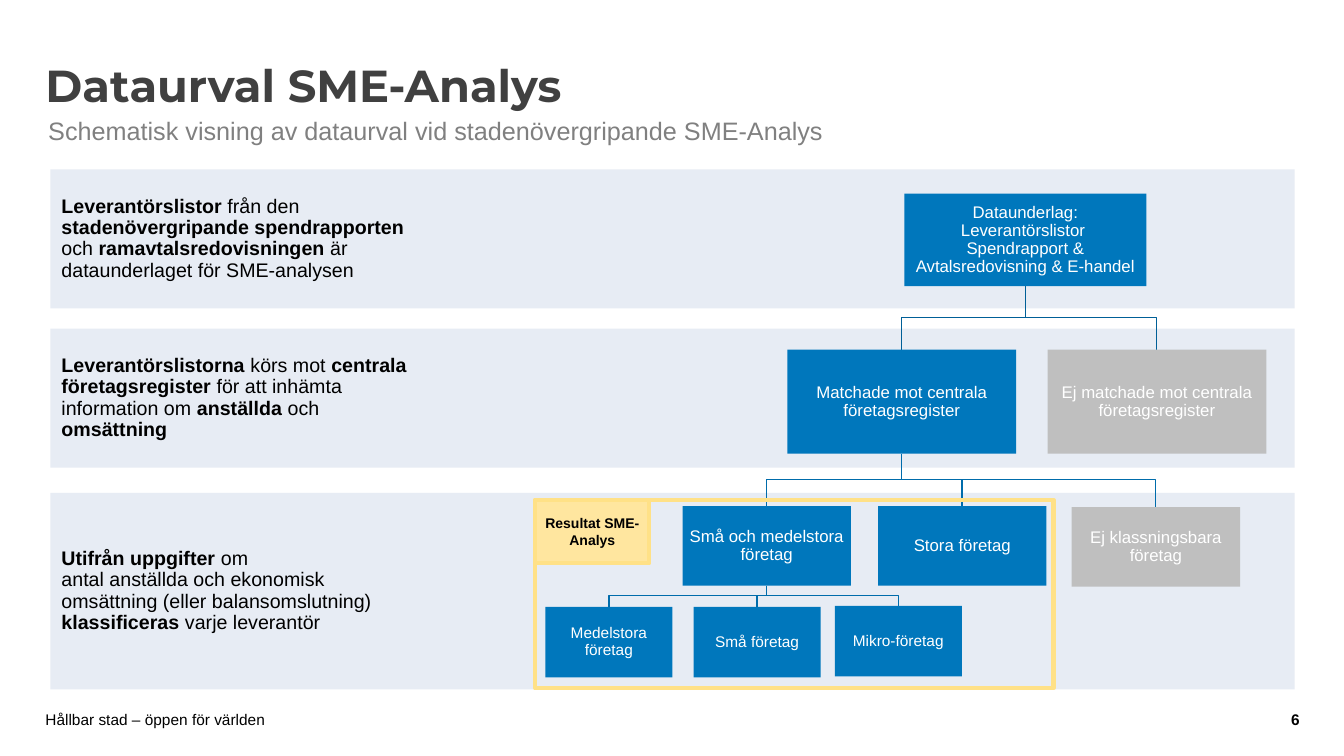
import pptx
import pptx.dml.color
import pptx.enum.shapes
import pptx.enum.text
import pptx.util

PX = 9144
COLORS = {
    "band": "E7ECF4",
    "blue": "0077BC",
    "gray": "BFBFBF",
    "upper link": "005F97",
    "lower link": "006CAB",
    "frame": "FFE187",
    "tag": "FFE69F",
    "title": "404040",
    "subtitle": "808080",
    "black": "000000",
    "white": "FFFFFF",
}
RGB = {name: pptx.dml.color.RGBColor.from_string(value) for name, value in COLORS.items()}
LEFT = pptx.enum.text.PP_ALIGN.LEFT
CENTER = pptx.enum.text.PP_ALIGN.CENTER
RIGHT = pptx.enum.text.PP_ALIGN.RIGHT

presentation = pptx.Presentation()
presentation.slide_width = 1333 * PX
presentation.slide_height = 750 * PX
slide = presentation.slides.add_slide(presentation.slide_layouts[5])


def add_rectangle(box, fill=None, line=None):
    shape = slide.shapes.add_shape(
        pptx.enum.shapes.MSO_SHAPE.RECTANGLE, *[length * PX for length in box]
    )
    shape.shadow.inherit = False
    if fill:
        shape.fill.solid()
        shape.fill.fore_color.rgb = RGB[fill]
    else:
        shape.fill.background()
    if line:
        shape.line.color.rgb = RGB[line]
        shape.line.width = pptx.util.Pt(3)
    else:
        shape.line.fill.background()
    return shape


def write(shape, parts, size, color, align=LEFT, insets=(0, 0), spacing=1.0, font="Arial"):
    frame = shape.text_frame
    frame.word_wrap = True
    frame.auto_size = pptx.enum.text.MSO_AUTO_SIZE.NONE
    frame.vertical_anchor = pptx.enum.text.MSO_ANCHOR.MIDDLE
    frame.margin_left = frame.margin_right = insets[0] * PX
    frame.margin_top = frame.margin_bottom = insets[1] * PX
    paragraph = frame.paragraphs[0]
    paragraph.alignment = align
    paragraph.line_spacing = spacing
    for text, bold in parts:
        for index, piece in enumerate(text.split("\n")):
            if index:
                paragraph.add_line_break()
            run = paragraph.add_run()
            run.text = piece
            run.font.name = font
            run.font.size = pptx.util.Pt(size)
            run.font.bold = bold
            run.font.color.rgb = RGB[color]


title = slide.shapes.title
title.left, title.top, title.width, title.height = [n * PX for n in (45, 44, 1003, 87)]
write(title, [("Dataurval SME-Analys", True)], 32, "title",
      insets=(0, 5), spacing=0.9, font="Montserrat")

bands = [
    (168, 138, [
        ("Leverantörslistor", True),
        (" från den ", False),
        ("stadenövergripande spendrapporten ", True),
        ("och ", False),
        ("ramavtalsredovisningen", True),
        (" är dataunderlaget för SME-analysen", False),
    ]),
    (326, 138, [
        ("Leverantörslistorna", True),
        (" körs mot ", False),
        ("centrala företagsregister", True),
        (" för att inhämta information om ", False),
        ("anställda", True),
        (" och ", False),
        ("omsättning", True),
    ]),
    (489, 195, [
        ("Utifrån uppgifter ", True),
        ("om \nantal anställda och ekonomisk omsättning (eller balansomslutning) ", False),
        ("klassificeras ", True),
        ("varje leverantör", False),
    ]),
]
for top, height, parts in bands:
    add_rectangle((50, top, 1234, height), "band")
    label = slide.shapes.add_textbox(50 * PX, top * PX, 370 * PX, height * PX)
    write(label, parts, 14, "black", insets=(11, 11), spacing=0.9)

nodes = {
    "source": ((897, 192, 240, 92), "blue", 12,
               "Dataunderlag: Leverantörslistor \nSpendrapport & Avtalsredovisning & E-handel"),
    "matched": ((781, 347, 227, 103), "blue", 12, "Matchade mot centrala företagsregister"),
    "unmatched": ((1039, 347, 217, 103), "gray", 12, "Ej matchade mot centrala företagsregister"),
    "small and medium": ((677, 502, 167, 79), "blue", 12, "Små och medelstora företag"),
    "large": ((871, 502, 167, 79), "blue", 12, "Stora företag"),
    "unclassified": ((1063, 503, 167, 79), "gray", 12, "Ej klassningsbara företag"),
    "medium": ((541, 602, 126, 70), "blue", 11, "Medelstora företag"),
    "small": ((688, 602, 126, 70), "blue", 11, "Små företag"),
    "micro": ((828, 601, 126, 70), "blue", 11, "Mikro-företag"),
}
links = [
    ("source", "upper link", ["matched", "unmatched"]),
    ("matched", "lower link", ["small and medium", "large", "unclassified"]),
    ("small and medium", "lower link", ["medium", "small", "micro"]),
]
for parent, color, children in links:
    left, top, width, height = nodes[parent][0]
    start_x, start_y = left + width // 2, top + height
    for child in children:
        child_left, end_y, child_width, child_height = nodes[child][0]
        end_x = child_left + child_width // 2
        middle_y = (start_y + end_y) // 2
        builder = slide.shapes.build_freeform(start_x, start_y, scale=PX)
        builder.add_line_segments(
            [(start_x, middle_y), (end_x, middle_y), (end_x, end_y)], close=False
        )
        link = builder.convert_to_shape()
        link.shadow.inherit = False
        link.fill.background()
        link.line.color.rgb = RGB[color]
        link.line.width = pptx.util.Pt(1)

for box, fill, size, text in nodes.values():
    write(add_rectangle(box, fill), [(text, False)], size, "white", CENTER, (5, 5), 0.9)

add_rectangle((531, 496, 514, 187), line="frame")
tag = add_rectangle((531, 496, 113, 63), "tag", "frame")
write(tag, [("Resultat SME-Analys", True)], 10, "black", CENTER, (10, 5))

captions = [
    ((38, 109, 839, 40), "Schematisk visning av dataurval vid stadenövergripande SME-Analys",
     18, "subtitle", False, LEFT, (10, 5)),
    ((45, 706, 945, 16), "Hållbar stad – öppen för världen", 11, "black", False, LEFT, (0, 0)),
    ((1225, 706, 64, 16), "6", 11, "black", True, RIGHT, (0, 0)),
]
for box, text, size, color, bold, align, insets in captions:
    caption = slide.shapes.add_textbox(*[length * PX for length in box])
    write(caption, [(text, bold)], size, color, align, insets)

presentation.save("out.pptx")
